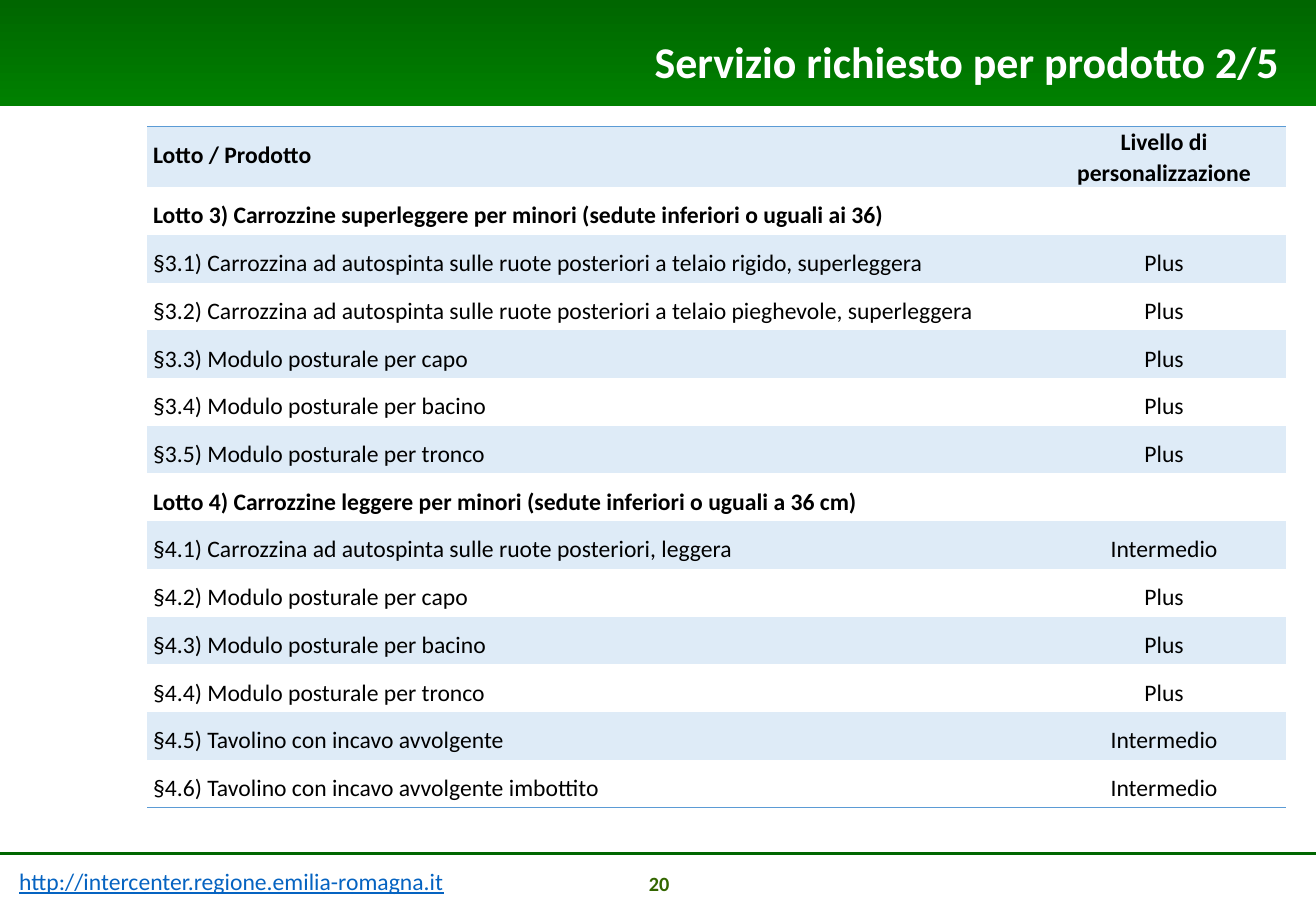
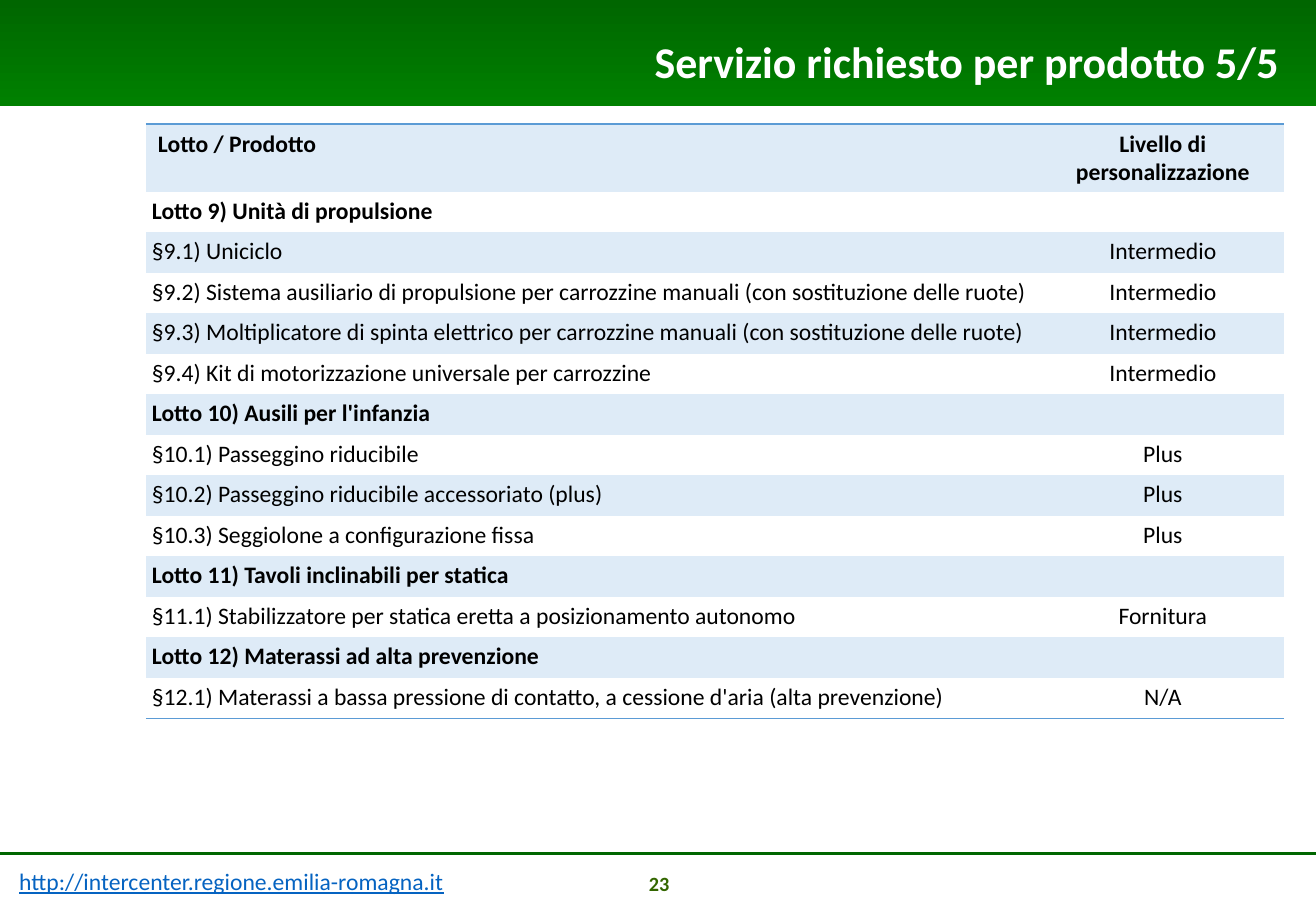
from lxml import etree
from pptx import Presentation
from pptx.dml.color import RGBColor
from pptx.enum.shapes import MSO_CONNECTOR, MSO_SHAPE
from pptx.enum.text import MSO_ANCHOR as ANCHOR, PP_ALIGN as ALIGN
from pptx.oxml.ns import qn
from pptx.util import Inches, Pt

FONT = "Calibri"
BLACK, WHITE = "000000", "FFFFFF"
DARK_GREEN, GREEN, NUMBER_GREEN = "006600", "008000", "336600"
LINK_BLUE, RULE_BLUE, BAND_BLUE = "0563C1", "5B9BD5", "DEEBF7"
PAGE_WIDTH, PAGE_HEIGHT = 10.83, 7.5
NO_TABLE_STYLE = "{2D5ABB26-0587-4C30-8999-92F81FD0307C}"
HEADER = ("Lotto / Prodotto", "Livello di personalizzazione")

LOTS_3_4 = [
    ("Lotto 3) Carrozzine superleggere per minori (sedute inferiori o uguali ai 36)", ""),
    ("§3.1) Carrozzina ad autospinta sulle ruote posteriori a telaio rigido, superleggera", "Plus"),
    ("§3.2) Carrozzina ad autospinta sulle ruote posteriori a telaio pieghevole, superleggera", "Plus"),
    ("§3.3) Modulo posturale per capo", "Plus"),
    ("§3.4) Modulo posturale per bacino", "Plus"),
    ("§3.5) Modulo posturale per tronco", "Plus"),
    ("Lotto 4) Carrozzine leggere per minori (sedute inferiori o uguali a 36 cm)", ""),
    ("§4.1) Carrozzina ad autospinta sulle ruote posteriori, leggera", "Intermedio"),
    ("§4.2) Modulo posturale per capo", "Plus"),
    ("§4.3) Modulo posturale per bacino", "Plus"),
    ("§4.4) Modulo posturale per tronco", "Plus"),
    ("§4.5) Tavolino con incavo avvolgente", "Intermedio"),
    ("§4.6) Tavolino con incavo avvolgente imbottito", "Intermedio"),
]
LOTS_9_12 = [
    ("Lotto 9) Unità di propulsione", ""),
    ("§9.1) Uniciclo", "Intermedio"),
    ("§9.2) Sistema ausiliario di propulsione per carrozzine manuali (con sostituzione delle ruote)", "Intermedio"),
    ("§9.3) Moltiplicatore di spinta elettrico per carrozzine manuali (con sostituzione delle ruote)", "Intermedio"),
    ("§9.4) Kit di motorizzazione universale per carrozzine", "Intermedio"),
    ("Lotto 10) Ausili per l'infanzia", ""),
    ("§10.1) Passeggino riducibile", "Plus"),
    ("§10.2) Passeggino riducibile accessoriato (plus)", "Plus"),
    ("§10.3) Seggiolone a configurazione fissa", "Plus"),
    ("Lotto 11) Tavoli inclinabili per statica", ""),
    ("§11.1) Stabilizzatore per statica eretta a posizionamento autonomo", "Fornitura"),
    ("Lotto 12) Materassi ad alta prevenzione", ""),
    ("§12.1) Materassi a bassa pressione di contatto, a cessione d'aria (alta prevenzione)", "N/A"),
]


def rgb(value):
    return RGBColor.from_string(value)


def write(frame, text, size, color, bold=False, align=ALIGN.LEFT):
    """Fill a text frame with one styled paragraph and return it."""
    frame.word_wrap = True
    para = frame.paragraphs[0]
    para.text = text
    para.alignment = align
    for span in para.runs:
        span.font.name, span.font.size, span.font.bold = FONT, Pt(size), bold
        span.font.color.rgb = rgb(color)
    return para


def add_text(page, box, text, size, color, **style):
    shape = page.shapes.add_textbox(*map(Inches, box))
    return write(shape.text_frame, text, size, color, **style)


def add_title_band(page, title):
    band = page.shapes.add_shape(MSO_SHAPE.RECTANGLE, 0, 0, Inches(PAGE_WIDTH), Inches(0.87))
    band.shadow.inherit = False
    band.line.fill.background()
    band.fill.gradient()
    band.fill.gradient_angle = 270
    for stop, position, color in zip(band.fill.gradient_stops, (0, 1), (DARK_GREEN, GREEN)):
        stop.position = position
        stop.color.rgb = rgb(color)
    add_text(page, (0.65, 0.24, 9.98, 0.54), title, 26, WHITE, bold=True, align=ALIGN.RIGHT)


def add_footer(page, number):
    top = Inches(7.03)
    rule = page.shapes.add_connector(MSO_CONNECTOR.STRAIGHT, 0, top, Inches(PAGE_WIDTH), top)
    rule.line.color.rgb = rgb(DARK_GREEN)
    rule.line.width = Pt(1.75)
    etree.SubElement(rule._element.spPr, qn("a:effectLst"))
    address = add_text(page, (0.06, 7.09, 4.81, 0.34),
                       "http://intercenter.regione.emilia-romagna.it", 14, LINK_BLUE)
    address.runs[0].font.underline = True
    add_text(page, (4.3, 7.12, 2.25, 0.27), str(number), 12, NUMBER_GREEN,
             bold=True, align=ALIGN.CENTER)


def add_border(cell, side):
    """Draw a one-point border on a cell; side is lnT or lnB."""
    border = etree.Element(qn("a:" + side), w=str(Pt(1)))
    fill = etree.SubElement(border, qn("a:solidFill"))
    etree.SubElement(fill, qn("a:srgbClr"), val=RULE_BLUE)
    cell._tc.get_or_add_tcPr().insert(0, border)


def add_lot_table(page, box, lots, header_height, inset, spacing, header_spacing):
    """Place a banded two-column table whose body rows share the height left by the header."""
    left, top, width, height = box
    rows = [HEADER] + lots
    frame = page.shapes.add_table(len(rows), 2, *map(Inches, box))
    table = frame.table
    table.first_row = table.horz_banding = False
    table._tbl.tblPr.find(qn("a:tableStyleId")).text = NO_TABLE_STYLE
    level_width = 2
    table.columns[0].width = Inches(width - level_width)
    table.columns[1].width = Inches(level_width)
    body_height = (height - header_height) / len(lots)
    for index, texts in enumerate(rows):
        table.rows[index].height = Inches(body_height if index else header_height)
        bold = index == 0 or not texts[1]
        for column, text in enumerate(texts):
            cell = table.cell(index, column)
            cell.margin_left = cell.margin_right = Inches(0.05)
            cell.margin_top = cell.margin_bottom = Inches(inset if text else 0)
            cell.vertical_anchor = ANCHOR.TOP
            para = write(cell.text_frame, text, 14, BLACK, bold,
                         ALIGN.CENTER if column else ALIGN.LEFT)
            if text:
                para.line_spacing = spacing if index or not column else header_spacing
            if index % 2:
                cell.fill.background()
            else:
                cell.fill.solid()
                cell.fill.fore_color.rgb = rgb(BAND_BLUE)
            if index == 0:
                add_border(cell, "lnT")
            elif index == len(rows) - 1:
                add_border(cell, "lnB")
    return table


def add_page(deck, title, number):
    page = deck.slides.add_slide(deck.slide_layouts[6])
    add_title_band(page, title)
    add_footer(page, number)
    return page


def main():
    deck = Presentation()
    deck.slide_width, deck.slide_height = Inches(PAGE_WIDTH), Inches(PAGE_HEIGHT)

    page = add_page(deck, "Servizio richiesto per prodotto 2/5", 20)
    add_lot_table(page, (1.21, 1.04, 9.37, 5.61), LOTS_3_4, header_height=0.5,
                  inset=0, spacing=1.5, header_spacing=1.07)

    page = add_page(deck, "Servizio richiesto per prodotto 5/5", 23)
    table = add_lot_table(page, (1.2, 1.02, 9.37, 4.9), LOTS_9_12, header_height=0.56,
                          inset=0.04, spacing=1, header_spacing=1)
    product_header, level_header = table.cell(0, 0), table.cell(0, 1)
    product_header.margin_left = Inches(0.1)
    product_header.margin_top = Inches(0.05)
    level_header.vertical_anchor = ANCHOR.BOTTOM

    deck.save("out.pptx")


if __name__ == "__main__":
    main()
